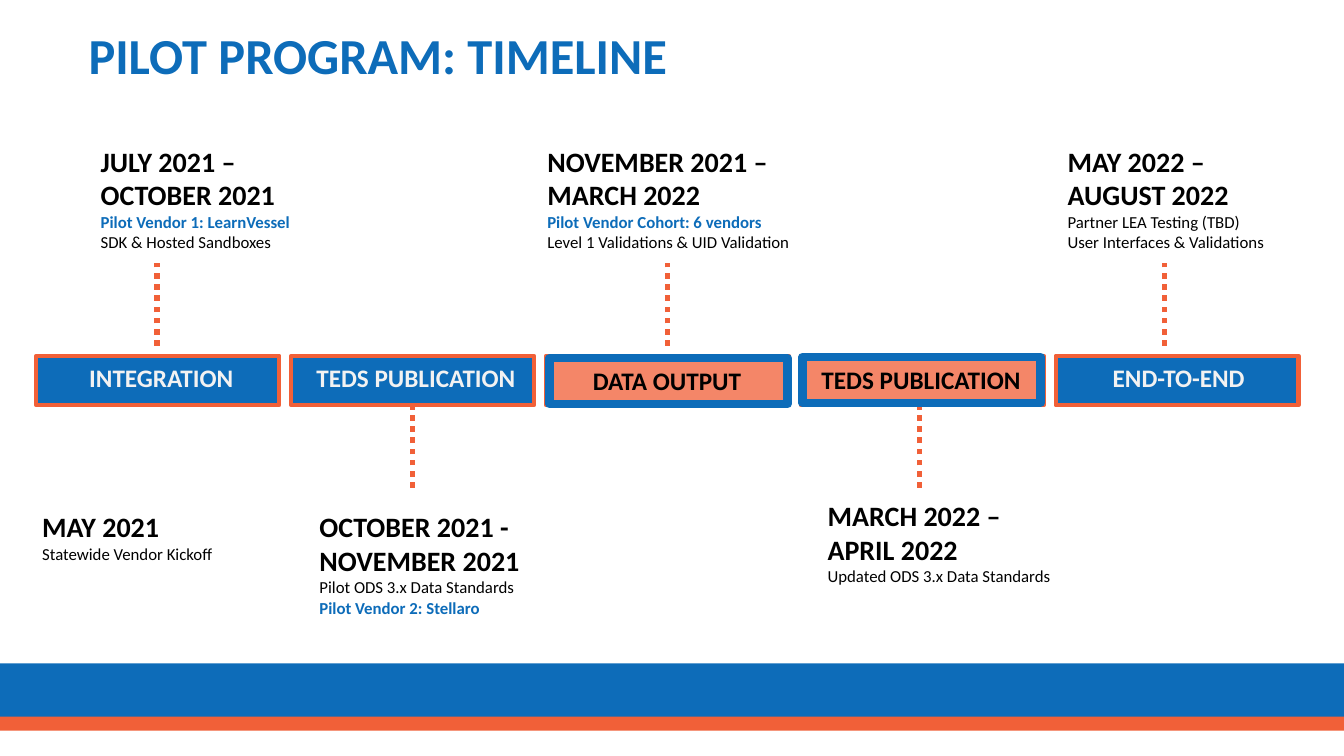
import pptx
import pptx.util
import pptx.dml.color
import pptx.enum.dml
import pptx.enum.shapes
import pptx.enum.text
from pptx.util import Inches

COLORS = {"blue": "0D6CB9", "orange": "F16038", "salmon": "F48668",
          "pale": "F2F2F2", "black": "000000"}
HEAD = {"size": 20, "bold": True}
BODY = {"size": 12}
KEY = {"size": 12, "bold": True, "color": "blue"}


def rgb(name):
    return pptx.dml.color.RGBColor.from_string(COLORS[name])


def add_run(para, text, size=12, bold=False, color="black"):
    run = para.add_run()
    run.text = text
    run.font.name = "Calibri"
    run.font.size = pptx.util.Pt(size)
    run.font.bold = bold
    run.font.color.rgb = rgb(color)


def add_text(slide, box, lines, wrap=True, align="LEFT", anchor="TOP", space=1.0):
    frame = slide.shapes.add_textbox(*map(Inches, box)).text_frame
    frame.word_wrap = wrap
    frame.vertical_anchor = getattr(pptx.enum.text.MSO_ANCHOR, anchor)
    for i, (text, style) in enumerate(lines):
        para = frame.add_paragraph() if i else frame.paragraphs[0]
        para.alignment = getattr(pptx.enum.text.PP_ALIGN, align)
        para.line_spacing = space
        add_run(para, text, **style)


def add_bar(slide, box, fill, line=None, width=0):
    bar = slide.shapes.add_shape(
        pptx.enum.shapes.MSO_SHAPE.RECTANGLE, *map(Inches, box))
    bar.shadow.inherit = False
    bar.fill.solid()
    bar.fill.fore_color.rgb = rgb(fill)
    if line:
        bar.line.color.rgb = rgb(line)
        bar.line.width = pptx.util.Pt(width)
    else:
        bar.line.fill.background()


def add_dots(slide, x, start, end):
    dots = slide.shapes.add_connector(
        pptx.enum.shapes.MSO_CONNECTOR.STRAIGHT,
        Inches(x), Inches(start), Inches(x), Inches(end))
    dots.line.color.rgb = rgb("orange")
    dots.line.width = pptx.util.Pt(4)
    dots.line.dash_style = pptx.enum.dml.MSO_LINE.ROUND_DOT
    props = dots._element.spPr
    props.append(props.makeelement(pptx.oxml.ns.qn("a:effectLst"), {}))


def main():
    deck = pptx.Presentation()
    deck.slide_width = Inches(13.33)
    deck.slide_height = Inches(7.5)
    slide = deck.slides.add_slide(deck.slide_layouts[6])

    add_bar(slide, (0, 6.58, 13.33, 0.58), "blue")
    add_bar(slide, (0, 7.11, 13.33, 0.14), "orange")
    for i in range(5):
        add_bar(slide, (0.36 + 2.5275 * i, 3.53, 2.41, 0.49), "blue", "orange", 3)
    for x in (1.56, 6.62, 11.55):
        add_dots(slide, x, 3.43, 2.61)
    for x in (4.09, 9.12):
        add_dots(slide, x, 4.84, 4.03)
    for box in ((5.45, 3.55, 2.36, 0.46), (7.96, 3.54, 2.36, 0.46)):
        add_bar(slide, box, "salmon", "blue", 6)

    add_text(slide, (0.78, 0.17, 12.16, 0.82),
             [("PILOT PROGRAM: TIMELINE", {"size": 36, "bold": True, "color": "blue"})],
             anchor="MIDDLE", space=0.9)

    stages = [
        ("INTEGRATION", 0.78, 3.55, 1.64, "pale"),
        ("TEDS PUBLICATION", 3.03, 3.55, 2.19, "pale"),
        ("DATA OUTPUT", 5.77, 3.58, 1.69, "black"),
        ("TEDS PUBLICATION", 8.04, 3.57, 2.19, "black"),
        ("END-TO-END", 10.92, 3.55, 1.54, "pale"),
    ]
    for text, x, y, width, color in stages:
        add_text(slide, (x, y, width, 0.4),
                 [(text, {"size": 18, "bold": True, "color": color})],
                 wrap=False, align="CENTER")

    notes = [
        ((0.9, 1.38, 2.3, 1.18),
         [("JULY 2021 –", HEAD), ("OCTOBER 2021", HEAD),
          ("Pilot Vendor 1: LearnVessel", KEY), ("SDK & Hosted Sandboxes", BODY)]),
        ((5.33, 1.38, 2.75, 1.18),
         [("NOVEMBER 2021 –", HEAD), ("MARCH 2022", HEAD),
          ("Pilot Vendor Cohort: 6 vendors", KEY),
          ("Level 1 Validations & UID Validation", BODY)]),
        ((10.49, 1.38, 2.3, 1.18),
         [("MAY 2022 –", HEAD), ("AUGUST 2022", HEAD),
          ("Partner LEA Testing (TBD)", BODY), ("User Interfaces & Validations", BODY)]),
        ((0.32, 5.01, 1.93, 0.64),
         [("MAY 2021", HEAD), ("Statewide Vendor Kickoff", BODY)]),
        ((3.07, 5.01, 2.76, 1.51),
         [("OCTOBER 2021 -", HEAD), ("NOVEMBER 2021", HEAD),
          ("Pilot ODS 3.x Data Standards", BODY), ("Pilot Vendor 2: Stellaro", KEY)]),
        ((8.11, 4.9, 2.57, 1.31),
         [("MARCH 2022 – APRIL 2022", HEAD), ("Updated ODS 3.x Data Standards", BODY)]),
    ]
    for box, lines in notes:
        add_text(slide, box, lines)

    deck.save("out.pptx")


if __name__ == "__main__":
    main()
